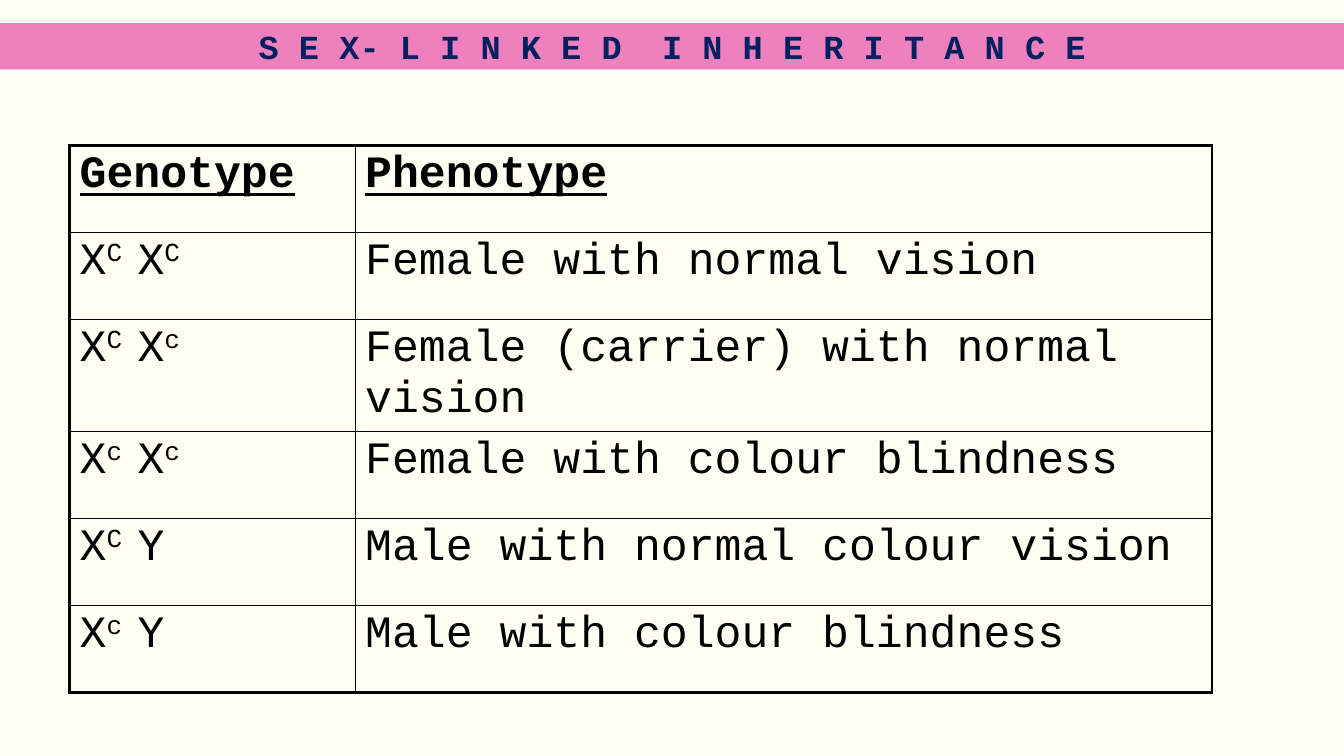
from dataclasses import dataclass

from lxml.etree import SubElement
from pptx import Presentation
from pptx.dml.color import RGBColor
from pptx.enum.shapes import MSO_SHAPE
from pptx.enum.text import MSO_ANCHOR, PP_ALIGN
from pptx.oxml.ns import qn
from pptx.util import Pt


@dataclass(frozen=True)
class Theme:
    font: str = "Courier New"
    background: str = "FFFEF3"
    banner: str = "EE81BD"
    heading: str = "002060"
    ink: str = "000000"
    heading_size: float = 24
    table_size: float = 32
    inner_line: float = 1
    outer_line: float = 2.25


THEME = Theme()

HEADING = "S E X- L I N K E D  I N H E R I T A N C E"
COLUMNS = ("Genotype", "Phenotype")
# Each genotype is a list of (chromosome, allele) pairs
CROSSES = [
    ([("X", "C "), ("X", "C")], "Female with normal vision"),
    ([("X", "C "), ("X", "c")], "Female (carrier) with normal vision"),
    ([("X", "c "), ("X", "c")], "Female with colour blindness"),
    ([("X", "C "), ("Y", "")], "Male with normal colour vision"),
    ([("X", "c "), ("Y", "")], "Male with colour blindness"),
]


def add_run(paragraph, text, size, color, bold=False, underline=False, raised=False):
    run = paragraph.add_run()
    run.text = text
    run.font.name = THEME.font
    run.font.size = Pt(size)
    run.font.color.rgb = RGBColor.from_string(color)
    run.font.bold = bold
    run.font.underline = underline
    if raised:
        run.font._element.set("baseline", "30000")


def set_borders(cell, widths):
    """Draw the cell edges; widths are left, right, top, bottom in points."""
    properties = cell._tc.get_or_add_tcPr()
    for position, (edge, width) in enumerate(zip("LRTB", widths)):
        line = SubElement(properties, qn(f"a:ln{edge}"), w=str(Pt(width)))
        fill = SubElement(line, qn("a:solidFill"))
        SubElement(fill, qn("a:srgbClr"), val=THEME.ink)
        properties.insert(position, line)


def add_banner(slide, left, top, width, height):
    banner = slide.shapes.add_shape(
        MSO_SHAPE.RECTANGLE, Pt(left), Pt(top), Pt(width), Pt(height))
    banner.shadow.inherit = False
    banner.fill.solid()
    banner.fill.fore_color.rgb = RGBColor.from_string(THEME.banner)
    banner.line.fill.background()
    frame = banner.text_frame
    frame.word_wrap = True
    frame.vertical_anchor = MSO_ANCHOR.MIDDLE
    frame.paragraphs[0].alignment = PP_ALIGN.CENTER
    add_run(frame.paragraphs[0], HEADING, THEME.heading_size, THEME.heading, bold=True)


def add_genotype_table(slide, left, top, width, height):
    row_count = len(CROSSES) + 1
    table = slide.shapes.add_table(
        row_count, len(COLUMNS), Pt(left), Pt(top), Pt(width), Pt(height)).table
    table.first_row = table.horz_banding = False
    for column, share in zip(table.columns, (0.25, 0.75)):
        column.width = Pt(width * share)
    for row in table.rows:
        row.height = Pt(height / row_count)

    # Header row
    for index, label in enumerate(COLUMNS):
        add_run(table.cell(0, index).text_frame.paragraphs[0], label,
                THEME.table_size, THEME.ink, bold=True, underline=True)

    # Genotypes with raised alleles, and their phenotypes
    for index, (genotype, phenotype) in enumerate(CROSSES, start=1):
        symbols = table.cell(index, 0).text_frame.paragraphs[0]
        for chromosome, allele in genotype:
            add_run(symbols, chromosome, THEME.table_size, THEME.ink)
            if allele:
                add_run(symbols, allele, THEME.table_size, THEME.ink, raised=True)
        add_run(table.cell(index, 1).text_frame.paragraphs[0], phenotype,
                THEME.table_size, THEME.ink)

    # Heavy frame, fine inner rules
    last_row, last_column = row_count - 1, len(COLUMNS) - 1
    for y in range(row_count):
        for x in range(len(COLUMNS)):
            cell = table.cell(y, x)
            cell.fill.background()
            on_frame = (x == 0, x == last_column, y == 0, y == last_row)
            set_borders(cell, [THEME.outer_line if outer else THEME.inner_line
                               for outer in on_frame])


def main():
    deck = Presentation()
    deck.slide_width, deck.slide_height = Pt(960), Pt(540)
    slide = deck.slides.add_slide(deck.slide_layouts[6])
    slide.background.fill.solid()
    slide.background.fill.fore_color.rgb = RGBColor.from_string(THEME.background)
    add_banner(slide, 0, 16.6, 960, 33)
    add_genotype_table(slide, 49.7, 103.7, 816, 373.8)
    deck.save("out.pptx")


if __name__ == "__main__":
    main()
